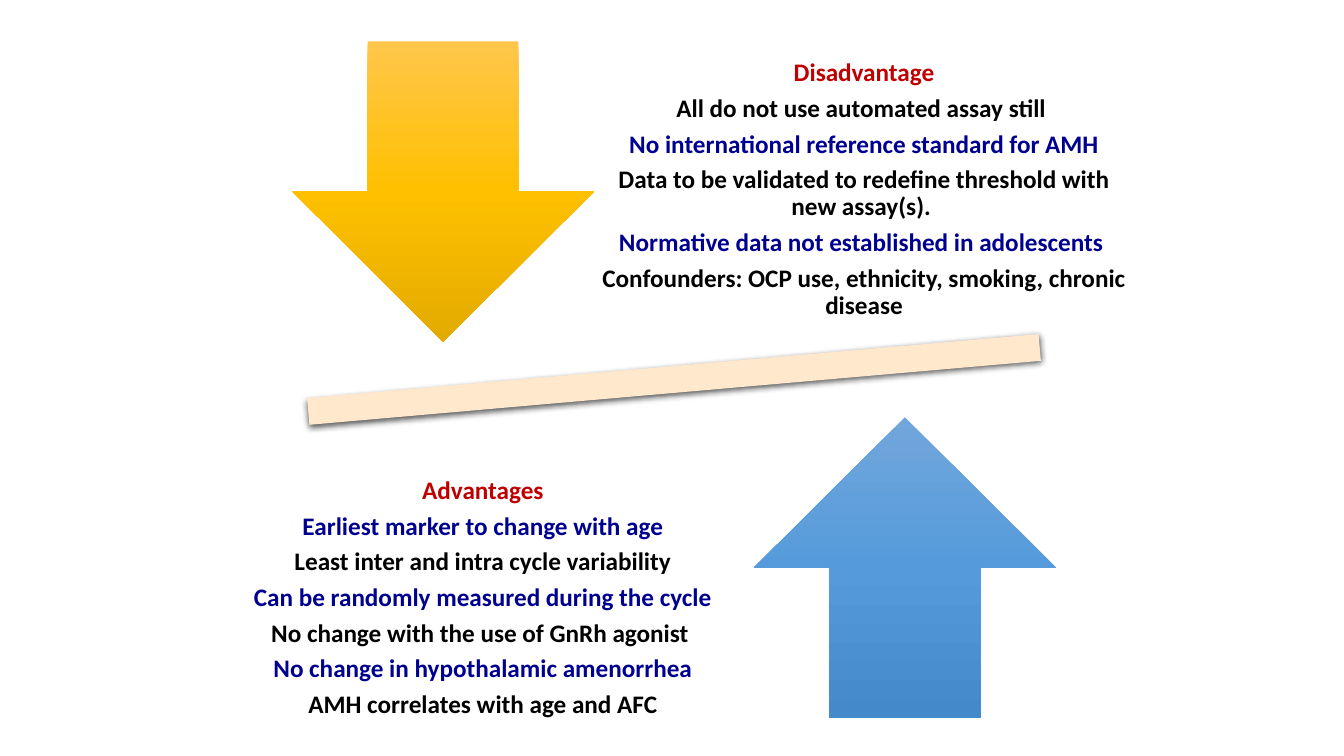
"""Slide weighing the disadvantages and advantages of AMH."""
from copy import deepcopy
from dataclasses import dataclass

from lxml import etree
from pptx import Presentation
from pptx.dml.color import RGBColor
from pptx.enum.shapes import MSO_SHAPE
from pptx.enum.text import MSO_ANCHOR, PP_ALIGN
from pptx.oxml.ns import qn
from pptx.util import Inches, Pt

DOWN_ARROW = MSO_SHAPE.DOWN_ARROW
UP_ARROW = MSO_SHAPE.UP_ARROW
MINUS = MSO_SHAPE.MATH_MINUS
MIDDLE = MSO_ANCHOR.MIDDLE
CENTER = PP_ALIGN.CENTER
BLANK_LAYOUT = 6


@dataclass(frozen=True)
class Theme:
    font: str = "Calibri"
    size: int = 18
    heading: str = "C00000"
    black: str = "000000"
    navy: str = "000090"
    beam: str = "FFE8CC"
    shadow: str = "000000"
    gold: tuple = ("FFC64B", "FFC000", "E3AB00")
    blue: tuple = ("71A6DB", "559BDB", "448ACA")


THEME = Theme()

DISADVANTAGES = [
    ("Disadvantage", THEME.heading),
    ("All do not use automated assay still ", THEME.black),
    ("No international reference standard for AMH", THEME.navy),
    ("Data to be validated to redefine threshold with new assay(s). ", THEME.black),
    ("Normative data not established in adolescents ", THEME.navy),
    ("Confounders: OCP use, ethnicity, smoking, chronic disease", THEME.black),
]
ADVANTAGES = [
    ("Advantages", THEME.heading),
    ("Earliest marker to change with age", THEME.navy),
    ("Least inter and intra cycle variability", THEME.black),
    ("Can be randomly measured during the cycle", THEME.navy),
    ("No change with the use of GnRh agonist ", THEME.black),
    ("No change in hypothalamic amenorrhea", THEME.navy),
    ("AMH correlates with age and AFC", THEME.black),
]


def add_plain_shape(s, kind, left, top, width, height):
    sp = s.shapes.add_shape(kind, Inches(left), Inches(top), Inches(width), Inches(height))
    sp.line.fill.background()
    sp.shadow.inherit = False
    return sp


def add_shadow(sp):
    effects = sp._element.spPr.find(qn("a:effectLst"))
    outer = etree.SubElement(effects, qn("a:outerShdw"), blurRad=str(Pt(4.5)),
                             dist=str(Pt(1.5)), dir="5400000", rotWithShape="0")
    color = etree.SubElement(outer, qn("a:srgbClr"), val=THEME.shadow)
    etree.SubElement(color, qn("a:alpha"), val="63000")


def add_beam(s):
    sp = add_plain_shape(s, MINUS, 1.73, 3.2, 9.91, 1.13)
    sp.rotation = 355
    sp.fill.solid()
    sp.fill.fore_color.rgb = RGBColor.from_string(THEME.beam)
    add_shadow(sp)


def add_arrow(s, kind, left, top, colors):
    sp = add_plain_shape(s, kind, left, top, 2.99, 2.98)
    sp.fill.gradient()
    sp.fill.gradient_angle = 270
    stop_list = sp._element.spPr.find(".//" + qn("a:gsLst"))
    stop_list.insert(1, deepcopy(stop_list[0]))
    for i, (stop, color) in enumerate(zip(sp.fill.gradient_stops, colors)):
        stop.position = i / 2
        stop.color.rgb = RGBColor.from_string(color)


def add_points(s, left, top, width, points):
    tf = s.shapes.add_textbox(Inches(left), Inches(top), Inches(width), Inches(3.13)).text_frame
    tf.word_wrap = True
    tf.vertical_anchor = MIDDLE
    tf.margin_left = tf.margin_right = tf.margin_top = tf.margin_bottom = Inches(0.14)
    tf.text = "\n".join(text for text, _ in points)
    for p, (_, color) in zip(tf.paragraphs, points):
        p.alignment = CENTER
        p.line_spacing = 0.9
        p.space_after = Pt(6)
        font = p.runs[0].font
        font.name = THEME.font
        font.size = Pt(THEME.size)
        font.bold = True
        font.color.rgb = RGBColor.from_string(color)


def main():
    prs = Presentation()
    prs.slide_width = Inches(13.33)
    prs.slide_height = Inches(7.5)
    s = prs.slides.add_slide(prs.slide_layouts[BLANK_LAYOUT])
    add_beam(s)
    add_arrow(s, DOWN_ARROW, 2.9, 0.41, THEME.gold)
    add_points(s, 5.76, 0.32, 5.62, DISADVANTAGES)
    add_arrow(s, UP_ARROW, 7.48, 4.14, THEME.blue)
    add_points(s, 2.09, 4.37, 5.4, ADVANTAGES)
    prs.save("out.pptx")


if __name__ == "__main__":
    main()
